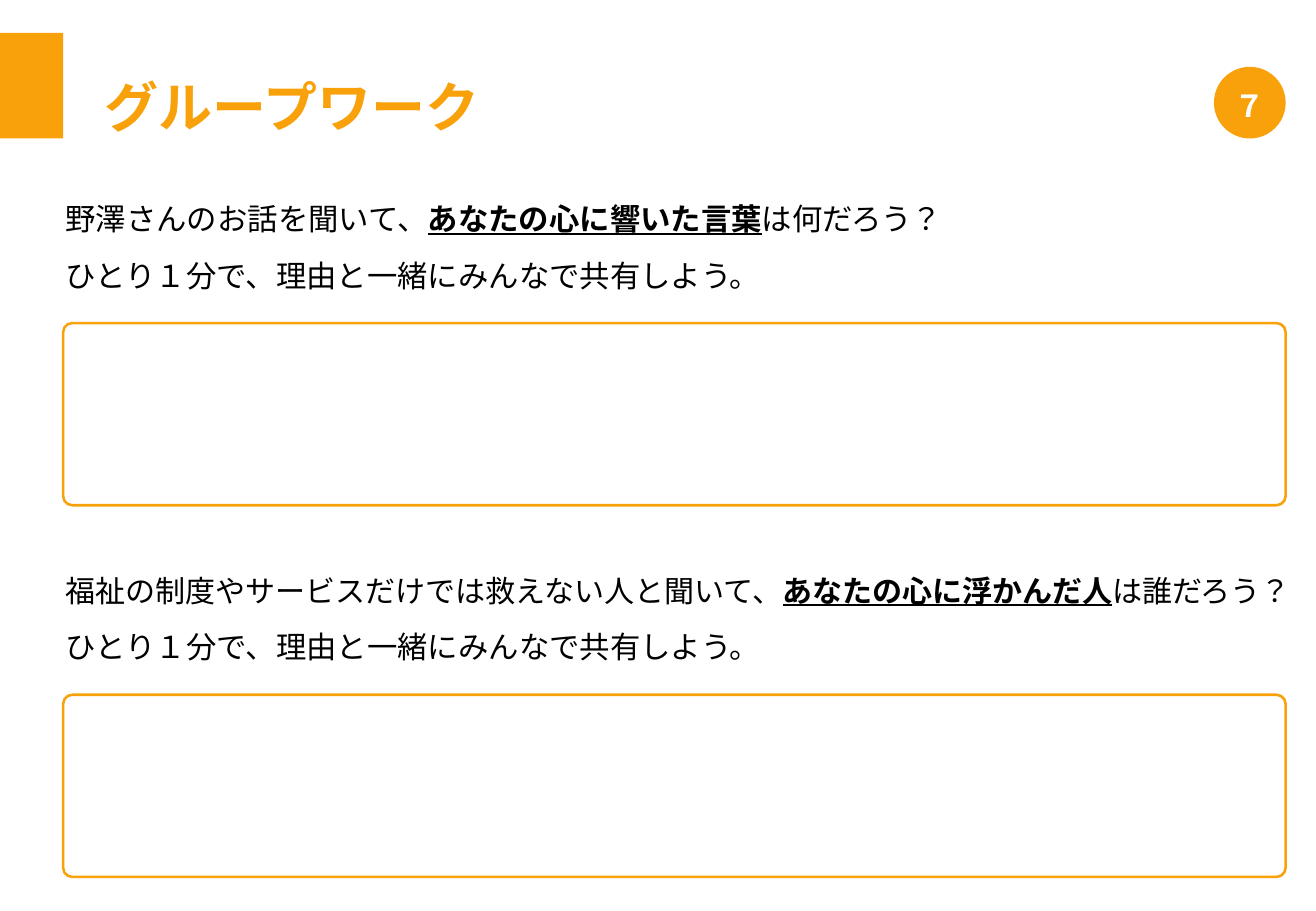
"""Build the group work slide: a heading and two questions with answer boxes."""
import pptx
import pptx.dml.color
import pptx.enum.lang
import pptx.enum.shapes
import pptx.enum.text
import pptx.util
from lxml import etree

ORANGE = pptx.dml.color.RGBColor(0xF8, 0xA1, 0x0A)
WHITE = pptx.dml.color.RGBColor(0xFF, 0xFF, 0xFF)
BLACK = pptx.dml.color.RGBColor(0x00, 0x00, 0x00)
FONT = "Roboto"
DRAWING = "{http://schemas.openxmlformats.org/drawingml/2006/main}"
Inches = pptx.util.Inches
SHAPES = pptx.enum.shapes.MSO_SHAPE

WIDTH, HEIGHT = 10.83, 7.5
MARGIN = 0.52
TEXT_LEFT = 0.44
BOX_WIDTH, BOX_HEIGHT = 10.06, 1.5
FIRST_ROW, ROW_STEP = 1.6, 3.06
BOX_OFFSET = 1.06

presentation = pptx.Presentation()
presentation.slide_width = Inches(WIDTH)
presentation.slide_height = Inches(HEIGHT)
slide = presentation.slides.add_slide(presentation.slide_layouts[6])


def add_orange_shape(kind, left, top, width, height, filled=True):
    shape = slide.shapes.add_shape(kind, Inches(left), Inches(top), Inches(width), Inches(height))
    shape.shadow.inherit = False
    if filled:
        shape.fill.solid()
        shape.fill.fore_color.rgb = ORANGE
        shape.line.fill.background()
    else:
        shape.fill.background()
        shape.line.color.rgb = ORANGE
        shape.line.width = pptx.util.Pt(1.5)
    return shape


def add_run(paragraph, text, size, color, bold=False, underline=False):
    run = paragraph.add_run()
    run.text = text
    run.font.size = pptx.util.Pt(size)
    run.font.bold = bold
    run.font.underline = underline
    run.font.color.rgb = color
    run.font.name = FONT
    run.font.language_id = pptx.enum.lang.MSO_LANGUAGE_ID.JAPANESE
    latin = run.font._element.find(DRAWING + "latin")
    east_asian = etree.Element(DRAWING + "ea", typeface=FONT)
    latin.addnext(east_asian)


add_orange_shape(SHAPES.RECTANGLE, 0, 0.27, MARGIN, 0.87)

title = slide.shapes.add_textbox(Inches(0.76), Inches(0.56), Inches(7.51), Inches(0.64))
title.text_frame.word_wrap = True
add_run(title.text_frame.paragraphs[0], "グループワーク", 32, ORANGE, bold=True)

badge = add_orange_shape(SHAPES.OVAL, 9.99, 0.55, 0.59, 0.59)
badge_frame = badge.text_frame
badge_frame.word_wrap = False
badge_frame.margin_left = badge_frame.margin_right = badge_frame.margin_bottom = 0
badge_frame.margin_top = Inches(0.05)
badge_frame.vertical_anchor = pptx.enum.text.MSO_ANCHOR.MIDDLE
badge_frame.paragraphs[0].alignment = pptx.enum.text.PP_ALIGN.CENTER
add_run(badge_frame.paragraphs[0], "７", 18, WHITE, bold=True)

questions = [
    ("野澤さんのお話を聞いて、", "あなたの心に響いた言葉", "は何だろう？", 18),
    ("福祉の制度やサービスだけでは救えない人と聞いて、", "あなたの心に浮かんだ人", "は誰だろう？", 17.8),
]
for row, (opening, emphasis, ending, size) in enumerate(questions):
    top = FIRST_ROW + row * ROW_STEP
    answer_box = add_orange_shape(
        SHAPES.ROUNDED_RECTANGLE, MARGIN, top + BOX_OFFSET, BOX_WIDTH, BOX_HEIGHT, filled=False)
    answer_box.adjustments[0] = 0.05

    question = slide.shapes.add_textbox(
        Inches(TEXT_LEFT), Inches(top), Inches(WIDTH - TEXT_LEFT), Inches(0.88))
    question.text_frame.word_wrap = True
    paragraph = question.text_frame.paragraphs[0]
    add_run(paragraph, opening, size, BLACK)
    add_run(paragraph, emphasis, size, BLACK, bold=True, underline=True)
    add_run(paragraph, ending, size, BLACK)

    instruction = question.text_frame.add_paragraph()
    instruction.space_before = pptx.util.Pt(12)
    add_run(instruction, "ひとり１分で、理由と一緒にみんなで共有しよう。", 18, BLACK)

presentation.save("out.pptx")
